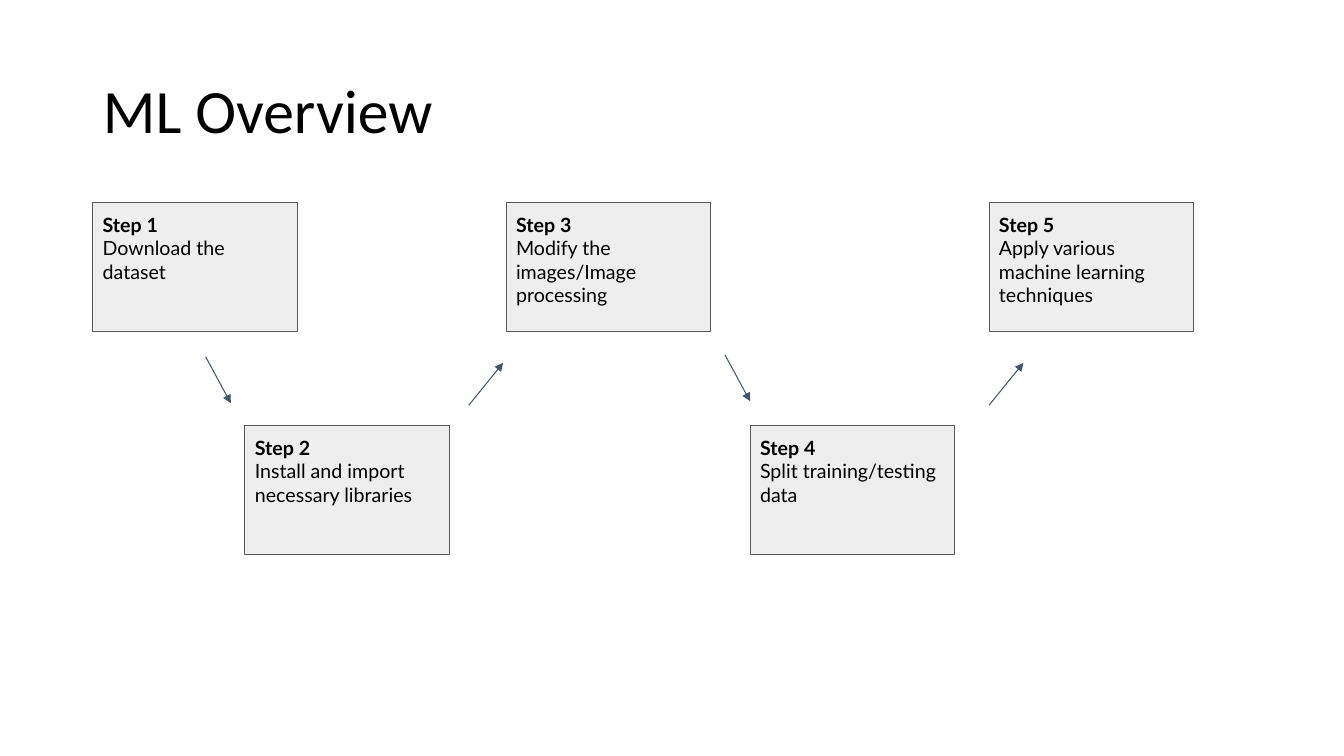
from typing import NamedTuple

from lxml.etree import SubElement
from pptx import Presentation
from pptx.dml.color import RGBColor
from pptx.enum.shapes import MSO_CONNECTOR, MSO_SHAPE
from pptx.enum.text import MSO_ANCHOR as Anchor, PP_ALIGN as Align
from pptx.oxml.ns import qn
from pptx.slide import Slide
from pptx.util import Inches, Pt

BLACK, BOX_FILL, BOX_LINE, ARROW = "000000", "EEEEEE", "595959", "44546A"
UPPER, LOWER = 2.01, 4.22
BOX_WIDTH, BOX_HEIGHT = 2.03, 1.28


class Step(NamedTuple):
    left: float
    top: float
    task: str


class Arrow(NamedTuple):
    left: float
    top: float
    width: float
    rise: float


STEPS = [
    Step(0.92, UPPER, "Download the dataset"),
    Step(2.43, LOWER, "Install and import necessary libraries"),
    Step(5.02, UPPER, "Modify the images/Image processing"),
    Step(7.44, LOWER, "Split training/testing data"),
    Step(9.81, UPPER, "Apply various machine learning techniques"),
]
ARROWS = [
    Arrow(2.04, 3.54, 0.25, 0.46),
    Arrow(4.65, 4.02, 0.34, -0.42),
    Arrow(7.19, 3.52, 0.25, 0.46),
    Arrow(9.81, 4.02, 0.34, -0.42),
]


def color(value: str) -> RGBColor:
    return RGBColor.from_string(value)


def add_title(page: Slide, text: str) -> None:
    title = page.shapes.title
    title.left, title.top = Inches(0.92), Inches(0.4)
    title.width, title.height = Inches(11.5), Inches(1.45)
    frame = title.text_frame
    frame.text = text
    frame.word_wrap = True
    frame.vertical_anchor = Anchor.MIDDLE
    para = frame.paragraphs[0]
    para.alignment = Align.LEFT
    para.line_spacing = 0.9
    font = para.runs[0].font
    font.name, font.size = "Calibri", Pt(44)
    font.color.rgb = color(BLACK)


def add_step(page: Slide, number: int, step: Step) -> None:
    box = page.shapes.add_shape(
        MSO_SHAPE.RECTANGLE, Inches(step.left), Inches(step.top),
        Inches(BOX_WIDTH), Inches(BOX_HEIGHT))
    box.shadow.inherit = False
    box.fill.solid()
    box.fill.fore_color.rgb = color(BOX_FILL)
    box.line.color.rgb = color(BOX_LINE)
    box.line.width = Pt(0.75)
    frame = box.text_frame
    frame.word_wrap = True
    frame.vertical_anchor = Anchor.TOP
    frame.margin_left = frame.margin_right = Inches(0.1)
    frame.margin_top = frame.margin_bottom = Inches(0.1)
    frame.text = f"Step {number}\n{step.task}"
    for index, para in enumerate(frame.paragraphs):
        para.alignment = Align.LEFT
        font = para.runs[0].font
        font.name, font.size, font.bold = "Lato", Pt(14), index == 0
        font.color.rgb = color(BLACK)


def add_arrow(page: Slide, arrow: Arrow) -> None:
    line = page.shapes.add_connector(
        MSO_CONNECTOR.STRAIGHT, Inches(arrow.left), Inches(arrow.top),
        Inches(arrow.left + arrow.width), Inches(arrow.top + arrow.rise))
    line.line.color.rgb = color(ARROW)
    line.line.width = Pt(0.75)
    properties = line._element.spPr
    SubElement(properties.find(qn("a:ln")), qn("a:tailEnd"), type="triangle")
    SubElement(properties, qn("a:effectLst"))


def main() -> None:
    deck = Presentation()
    deck.slide_width, deck.slide_height = Inches(13.33), Inches(7.5)
    page = deck.slides.add_slide(deck.slide_layouts.get_by_name("Title Only"))
    add_title(page, "ML Overview")
    for number, step in enumerate(STEPS, start=1):
        add_step(page, number, step)
    for arrow in ARROWS:
        add_arrow(page, arrow)
    deck.save("out.pptx")


if __name__ == "__main__":
    main()
